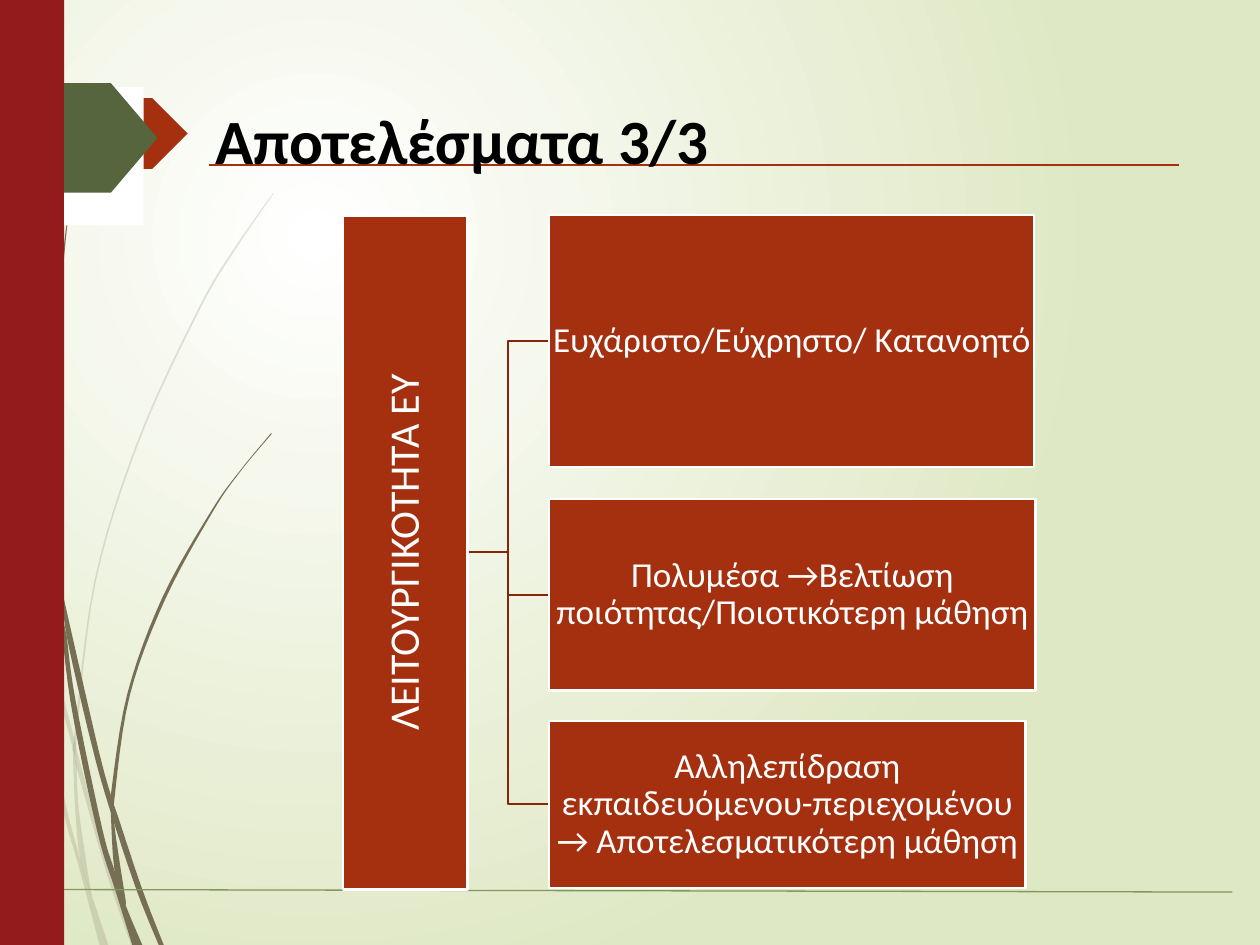
from dataclasses import dataclass
from typing import Optional

from lxml.etree import SubElement
from pptx import Presentation
from pptx.dml.color import RGBColor as Rgb
from pptx.enum.shapes import MSO_CONNECTOR as Conn, MSO_SHAPE as Kind
from pptx.enum.text import MSO_ANCHOR as Anchor, PP_ALIGN as Align
from pptx.oxml.ns import qn
from pptx.util import Emu, Pt

PX = 9144
FONT = "Calibri"
HEX = {
    "white": "FFFFFF", "black": "000000", "mist": "DFE8C4", "reed": "766F54",
    "rust": "A53010", "wine": "931B1B", "moss": "56653E", "leaf": "81985E",
    "link": "84260D",
}
Dots = list[tuple[float, float]]


@dataclass
class Wisp:
    left: Dots
    right: Dots
    alpha: int = 100


@dataclass
class Box:
    x: int
    y: int
    w: int
    h: int
    fill: str
    kind: Kind = Kind.RECTANGLE
    edge: Optional[str] = None
    text: str = ""
    size: int = 20
    inset: int = 1
    turn: int = 0


@dataclass
class Rule:
    start: tuple[int, int]
    end: tuple[int, int]
    color: str
    width: float = 0.75
    kind: Conn = Conn.STRAIGHT


WISPS = [
    Wisp([(12, 376), (40, 522), (59, 599), (61, 610), (85, 694), (104, 750)],
         [(10, 345), (43, 520), (59, 586), (64, 607), (88, 692), (108, 750)], 20),
    Wisp([(8, 350), (19, 470), (45, 621), (64, 693), (79, 750)],
         [(12, 376), (22, 469), (48, 619), (64, 683), (73, 711), (86, 750)], 20),
    Wisp([(217, 153), (186, 197), (158, 244), (110, 348), (75, 461),
          (59, 584), (58, 599), (60, 646), (64, 683), (73, 711)],
         [(217, 154), (187, 198), (159, 245), (111, 349), (76, 462),
          (61, 584), (61, 610), (63, 646), (72, 706)], 20),
    Wisp([(58, 141), (51, 193), (47, 245), (43, 349), (45, 449), (49, 472)],
         [(58, 141), (52, 193), (48, 245), (44, 349), (48, 453), (50, 472)]),
    Wisp([(50, 472), (53, 505), (73, 592), (88, 645), (109, 708), (126, 750)],
         [(50, 472), (77, 590), (88, 631), (94, 649), (113, 706), (130, 750)]),
    Wisp([(47, 477), (56, 557), (77, 659), (92, 708), (105, 750)],
         [(53, 505), (60, 556), (81, 657), (91, 691), (100, 719), (113, 750)]),
    Wisp([(215, 344), (191, 373), (168, 405), (129, 474), (101, 551),
          (88, 631), (88, 645), (91, 691), (100, 719)],
         [(216, 344), (191, 374), (169, 406), (131, 476), (103, 552),
          (91, 633), (91, 656), (100, 716)]),
]
RULES = [
    Rule((166, 131), (936, 131), "rust"),
    Rule((51, 706), (978, 708), "leaf"),
]
FRAME = [
    Box(51, 69, 63, 110, "white"),
    Box(51, 66, 74, 87, "moss", Kind.PENTAGON),
]
SPINE = Box(54, 389, 535, 99, "rust", edge="white", size=24, inset=2,
            turn=270, text="ΛΕΙΤΟΥΡΓΙΚΟΤΗΤΑ ΕΥ")
LEAVES = [
    Box(436, y, w, h, "rust", edge="white", text=text)
    for y, w, h, text in [
        (171, 385, 200, "Ευχάριστο/Εύχρηστο/ Κατανοητό"),
        (396, 386, 152, "Πολυμέσα →Βελτίωση ποιότητας/Ποιοτικότερη μάθηση"),
        (572, 378, 133, "Αλληλεπίδραση εκπαιδευόμενου-περιεχομένου "
                        "→ Αποτελεσματικότερη μάθηση"),
    ]
]


def px(n: float) -> Emu:
    return Emu(round(n * PX))


def rgb(name: str) -> Rgb:
    return Rgb.from_string(HEX[name])


def smooth(dots: Dots, steps: int = 6) -> Dots:
    ends = [dots[0], *dots, dots[-1]]
    out = []
    for a, b, c, d in zip(ends, ends[1:], ends[2:], ends[3:]):
        for k in range(steps):
            t = k / steps
            out.append(tuple(
                q + t * (r - p) / 2
                + t * t * (2 * p - 5 * q + 4 * r - s) / 2
                + t ** 3 * (3 * q - p - 3 * r + s) / 2
                for p, q, r, s in zip(a, b, c, d)))
    return out + [dots[-1]]


def draw_wisp(shapes, wisp: Wisp) -> None:
    ring = smooth(wisp.left) + smooth(wisp.right)[::-1]
    pen = shapes.build_freeform(*map(px, ring[0]))
    pen.add_line_segments([(px(x), px(y)) for x, y in ring[1:]])
    shape = pen.convert_to_shape()
    shape.shadow.inherit = False
    shape.line.fill.background()
    shape.fill.solid()
    shape.fill.fore_color.rgb = rgb("reed")
    if wisp.alpha < 100:
        tone = shape.element.spPr.find(qn("a:solidFill")).find(qn("a:srgbClr"))
        SubElement(tone, qn("a:alpha"), val=str(wisp.alpha * 1000))


def write(para, text: str, size: int, color: str, bold: bool = False) -> None:
    para.text = text
    font = para.font
    font.name, font.size, font.bold = FONT, Pt(size), bold
    font.color.rgb = rgb(color)


def draw_box(shapes, box: Box) -> None:
    shape = shapes.add_shape(box.kind, px(box.x), px(box.y), px(box.w), px(box.h))
    shape.shadow.inherit = False
    shape.rotation = box.turn
    shape.fill.solid()
    shape.fill.fore_color.rgb = rgb(box.fill)
    if box.edge:
        shape.line.color.rgb = rgb(box.edge)
        shape.line.width = Pt(1.25)
    else:
        shape.line.fill.background()
    if box.text:
        frame = shape.text_frame
        frame.word_wrap = True
        frame.vertical_anchor = Anchor.MIDDLE
        frame.margin_left = frame.margin_right = px(box.inset)
        frame.margin_top = frame.margin_bottom = px(box.inset)
        para = frame.paragraphs[0]
        para.alignment = Align.CENTER
        para.line_spacing = 0.9
        write(para, box.text, box.size, "white")


def draw_rule(shapes, rule: Rule) -> None:
    line = shapes.add_connector(rule.kind, *map(px, rule.start + rule.end))
    line.line.color.rgb = rgb(rule.color)
    line.line.width = Pt(rule.width)
    SubElement(line.element.spPr, qn("a:effectLst"))


def draw_title(shapes, text: str) -> None:
    area = shapes.add_textbox(px(161), px(76), px(449), px(63))
    area.text_frame.word_wrap = True
    write(area.text_frame.paragraphs[0], text, 36, "black", True)


def paint(slide) -> None:
    fill = slide.background.fill
    fill.gradient()
    for stop, name in zip(fill.gradient_stops, ("white", "mist")):
        stop.color.rgb = rgb(name)
    grad = slide.element.find(".//" + qn("a:gradFill"))
    grad.remove(grad.find(qn("a:lin")))
    ring = SubElement(grad, qn("a:path"))
    ring.set("path", "circle")
    SubElement(ring, qn("a:fillToRect"), l="50000", t="50000", r="100000", b="100000")


def main() -> None:
    deck = Presentation()
    deck.slide_width, deck.slide_height = px(1000), px(750)
    slide = deck.slides.add_slide(deck.slide_layouts[6])
    shapes = slide.shapes
    paint(slide)
    for wisp in WISPS:
        draw_wisp(shapes, wisp)
    draw_box(shapes, Box(0, 0, 51, 750, "wine"))
    draw_box(shapes, Box(51, 78, 98, 56, "rust", Kind.PENTAGON))
    for rule in RULES:
        draw_rule(shapes, rule)
    for box in FRAME:
        draw_box(shapes, box)
    draw_title(shapes, "Αποτελέσματα 3/3")
    for leaf in LEAVES:
        mid = leaf.y + leaf.h // 2
        draw_rule(shapes, Rule((371, 438), (leaf.x, mid), "link", 1.25, Conn.ELBOW))
    for box in [SPINE, *LEAVES]:
        draw_box(shapes, box)
    deck.save("out.pptx")


if __name__ == "__main__":
    main()
